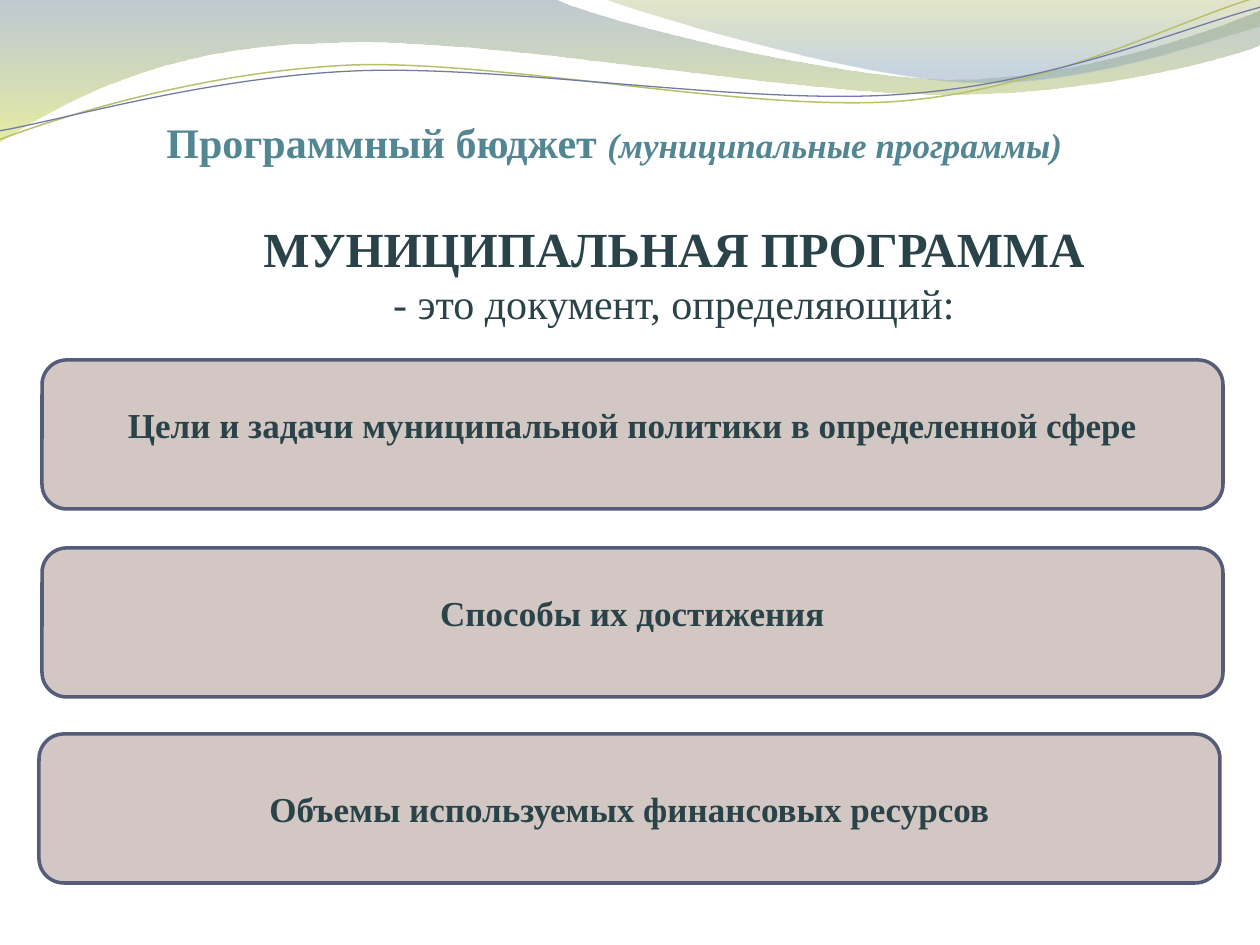
from lxml.etree import SubElement
from pptx import Presentation
from pptx.dml.color import RGBColor
from pptx.enum.shapes import MSO_SHAPE
from pptx.enum.text import MSO_ANCHOR, MSO_AUTO_SIZE, PP_ALIGN
from pptx.oxml.ns import qn
from pptx.util import Pt

PX = 914400 / 126
FACE = "Times New Roman"
DARK = "294349"


def paint(color, code):
    color.rgb = RGBColor.from_string(code)


def trace(steps, closed):
    """Draw an outline: pairs are corners, sixes are Bezier curves."""
    dots = [step[i:i + 2] for step in steps for i in range(0, len(step), 2)]
    pen = slide.shapes.build_freeform(*dots[0], scale=PX)
    pen.add_line_segments(dots[1:], close=closed)
    shape = pen.convert_to_shape()
    shape.shadow.inherit = False
    legs = iter(list(shape.element.iter(qn("a:lnTo"))))
    for step in steps[1:]:
        leg = next(legs)
        if len(step) == 6:
            curve = leg.makeelement(qn("a:cubicBezTo"))
            leg.addprevious(curve)
            for part in (leg, next(legs), next(legs)):
                curve.append(part[0])
                part.getparent().remove(part)
    return shape


deck = Presentation()
deck.slide_width, deck.slide_height = round(1260 * PX), round(945 * PX)
slide = deck.slides.add_slide(deck.slide_layouts[6])

# Wave bands: outline, then gradient stops (position, colour, opacity in %)
bands = [
    ([(0, 0), (554, -1), (600, 21, 837, 79, 955, 79),
      (1075, 79, 1207, 33, 1260, 11), (1261, 45),
      (1239, 55, 1096, 96, 940, 94), (784, 94, 481, 35, 324, 43),
      (162, 45, 58, 105, -1, 142)],
     [(0, "72889B", 45), (100, "D3DE57", 55)]),
    ([(604, -1), (641, 14, 859, 78, 969, 82),
      (1079, 87, 1211, 40, 1260, 26), (1260, 0)],
     [(0, "A4AC50", 30), (80, "84A3BD", 45)]),
]
for steps, stops in bands:
    band = trace(steps, True)
    band.line.fill.background()
    band.fill.gradient()
    band.fill.gradient_angle = 270
    for stop, (pos, code, solid) in zip(band.fill.gradient_stops, stops):
        stop.position = pos / 100
        paint(stop.color, code)
    tags = band.element.spPr.iter(qn("a:srgbClr"))
    for tag, (pos, code, solid) in zip(tags, stops):
        SubElement(tag, qn("a:alpha")).set("val", str(solid * 1000))

# Thin wave lines, tilted slightly
waves = [
    ([(-3, 110), (59, 90, 200, 52, 350, 52), (498, 53, 745, 118, 897, 114),
      (1048, 109, 1184, 45, 1260, 27)], "B9C06C", 0.85),
    ([(-2, 101), (58, 94, 207, 57, 357, 58), (508, 59, 751, 112, 902, 107),
      (1052, 104, 1187, 53, 1263, 37)], "727CA3", 0.75),
]
for steps, code, width in waves:
    wave = trace(steps, False)
    wave.rotation = 357.3
    wave.fill.background()
    paint(wave.line.color, code)
    wave.line.width = Pt(width)

# Definition and title: box, wrap, fit, alignment, colour, paragraphs of runs
texts = [
    ((208, 212, 932, 129), False, MSO_AUTO_SIZE.NONE, PP_ALIGN.CENTER, DARK,
     [[("МУНИЦИПАЛЬНАЯ ПРОГРАММА", 28, True, False)],
      [("- это документ, определяющий:", 24, False, False)]]),
    ((154, 110, 1062, 63), True, MSO_AUTO_SIZE.SHAPE_TO_FIT_TEXT,
     PP_ALIGN.LEFT, "528693",
     [[("Программный бюджет ", 24, True, False),
       ("(муниципальные программы)", 20, True, True)]]),
]
for place, wrap, fit, align, code, lines in texts:
    box = slide.shapes.add_textbox(*[round(n * PX) for n in place])
    frame = box.text_frame
    frame.word_wrap = wrap
    frame.auto_size = fit
    for i, parts in enumerate(lines):
        para = frame.add_paragraph() if i else frame.paragraphs[0]
        para.alignment = align
        para.font.name = FACE
        paint(para.font.color, code)
        for words, size, bold, slant in parts:
            run = para.add_run()
            run.text = words
            run.font.size = Pt(size)
            run.font.bold = bold
            run.font.italic = slant

# Cards: left, top, anchor, space under the text, text
cards = [
    (42, 360, MSO_ANCHOR.BOTTOM, 56,
     "Цели и задачи муниципальной политики в определенной сфере"),
    (42, 548, MSO_ANCHOR.BOTTOM, 56, "Способы их достижения"),
    (39, 734, MSO_ANCHOR.MIDDLE, 6,
     "Объемы используемых финансовых ресурсов"),
]
for x, y, anchor, foot, words in cards:
    place = [round(n * PX) for n in (x, y, 1181, 149)]
    card = slide.shapes.add_shape(MSO_SHAPE.ROUNDED_RECTANGLE, *place)
    card.shadow.inherit = False
    card.fill.solid()
    paint(card.fill.fore_color, "D2C7C3")
    paint(card.line.color, "545C79")
    card.line.width = Pt(2)
    frame = card.text_frame
    frame.word_wrap = True
    frame.vertical_anchor = anchor
    frame.margin_bottom = round(foot * PX)
    para = frame.paragraphs[0]
    para.text = words
    para.alignment = PP_ALIGN.CENTER
    para.font.name = FACE
    para.font.size = Pt(20)
    para.font.bold = True
    paint(para.font.color, DARK)

deck.save("out.pptx")
